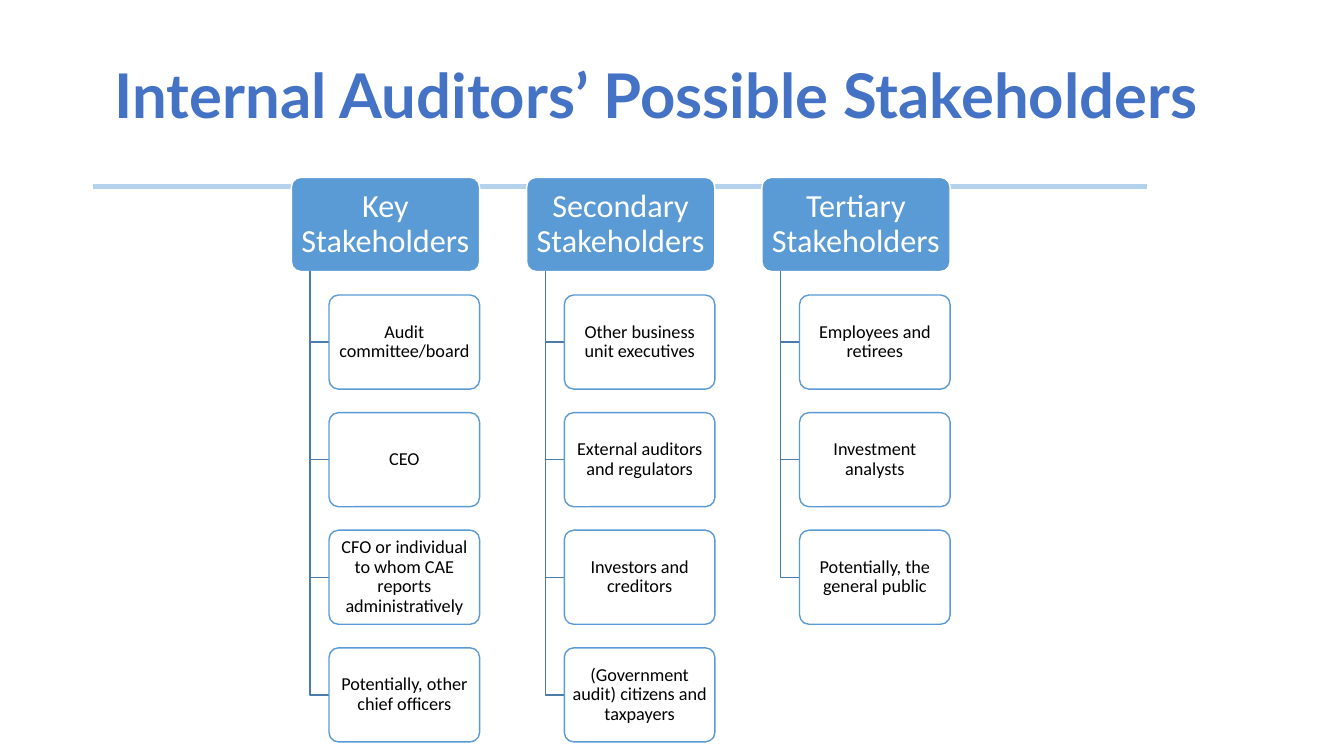
from lxml.etree import SubElement
from pptx import Presentation
from pptx.dml.color import RGBColor as RGB
from pptx.enum.shapes import MSO_CONNECTOR as CONN, MSO_SHAPE as SHAPE
from pptx.enum.text import MSO_ANCHOR as ANCHOR, PP_ALIGN as ALIGN
from pptx.oxml.ns import qn
from pptx.util import Inches, Pt

COLORS = {"title": "4472C4", "rule": "B5D2EC", "head": "5B9BD5",
          "stem": "497CAB", "white": "FFFFFF", "black": "000000"}
UNIT = 14 / 15
LEFT, TOP = 2.89, 1.76
COL, ROW = 2.5 * UNIT, 1.25 * UNIT
INDENT, STEM = 0.4 * UNIT, 0.2 * UNIT

HEAD = {"width": 2 * UNIT, "fill": "head", "line": "white", "inset": 0.07,
        "font": {"size": Pt(23), "name": "Calibri"}, "color": "white"}
ITEM = {"width": 1.6 * UNIT, "fill": "white", "line": "head", "inset": 0.05,
        "alpha": 90, "font": {"size": Pt(13), "name": "Calibri"}, "color": "black"}
TITLE = {"size": Pt(44), "name": "Lato", "bold": True}

GROUPS = {
    "Key Stakeholders": [
        "Audit committee/board", "CEO",
        "CFO or individual to whom CAE reports administratively",
        "Potentially, other chief officers"],
    "Secondary Stakeholders": [
        "Other business unit executives", "External auditors and regulators",
        "Investors and creditors", "(Government audit) citizens and taxpayers"],
    "Tertiary Stakeholders": [
        "Employees and retirees", "Investment analysts",
        "Potentially, the general public"],
}


def rgb(name):
    return RGB.from_string(COLORS[name])


def set_line(shape, color, width):
    shape.line.color.rgb = rgb(color)
    shape.line.width = Pt(width)


def write(sp, text, font, color, align):
    tf = sp.text_frame
    tf.word_wrap = True
    tf.vertical_anchor = ANCHOR.MIDDLE
    p = tf.paragraphs[0]
    p.alignment = align
    p.line_spacing = 0.9
    r = p.add_run()
    r.text = text
    for key, value in font.items():
        setattr(r.font, key, value)
    r.font.color.rgb = rgb(color)


def add_title(s, text):
    sp = s.shapes.add_textbox(Inches(1.04), Inches(0.4), Inches(11.38), Inches(1.16))
    write(sp, text, TITLE, "title", ALIGN.LEFT)


def add_rule(s):
    y = Inches(1.85)
    rule = s.shapes.add_connector(CONN.STRAIGHT, Inches(0.92), y, Inches(11.38), y)
    set_line(rule, "rule", 3.5)
    SubElement(rule._element.spPr, qn("a:effectLst"))


def add_box(s, x, y, text, style):
    sp = s.shapes.add_shape(SHAPE.ROUNDED_RECTANGLE, Inches(x), Inches(y),
                            Inches(style["width"]), Inches(UNIT))
    sp.adjustments[0] = 0.1
    sp.shadow.inherit = False
    sp.fill.solid()
    sp.fill.fore_color.rgb = rgb(style["fill"])
    if "alpha" in style:
        clr = sp._element.spPr.find(qn("a:solidFill"))[0]
        SubElement(clr, qn("a:alpha"), val=str(style["alpha"] * 1000))
    set_line(sp, style["line"], 1)
    for side in ("left", "right", "top", "bottom"):
        setattr(sp.text_frame, f"margin_{side}", Inches(style["inset"]))
    write(sp, text, style["font"], style["color"], ALIGN.CENTER)


def add_stem(s, x, top, bottom):
    start, end = Inches(x + STEM), Inches(x + INDENT)
    y = Inches(bottom)
    path = s.shapes.build_freeform(start, Inches(top))
    path.add_line_segments([(start, y), (end, y)], close=False)
    sp = path.convert_to_shape()
    sp.shadow.inherit = False
    sp.fill.background()
    set_line(sp, "stem", 1)


def add_group(s, x, name, items):
    add_box(s, x, TOP, name, HEAD)
    for row, item in enumerate(items, 1):
        y = TOP + row * ROW
        add_stem(s, x, TOP + UNIT, y + UNIT / 2)
        add_box(s, x + INDENT, y, item, ITEM)


def main():
    prs = Presentation()
    prs.slide_width, prs.slide_height = Inches(13.33), Inches(7.5)
    s = prs.slides.add_slide(prs.slide_layouts[6])
    add_rule(s)
    add_title(s, "Internal Auditors’ Possible Stakeholders")
    for col, (name, items) in enumerate(GROUPS.items()):
        add_group(s, LEFT + col * COL, name, items)
    prs.save("out.pptx")


if __name__ == "__main__":
    main()
